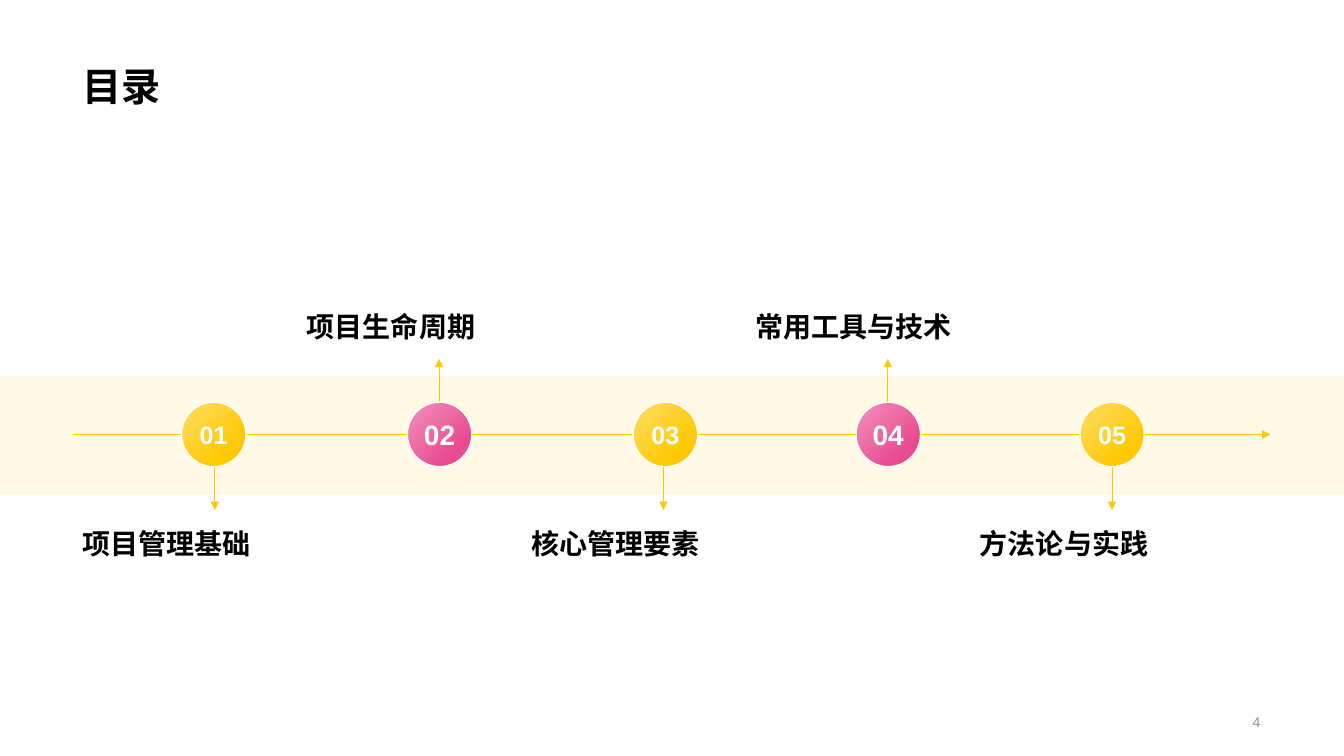
from lxml import etree
from pptx import Presentation
from pptx.dml.color import RGBColor
from pptx.enum import shapes, text
from pptx.oxml import ns
from pptx.util import Inches, Pt

COLORS = {
    "band": "FFC803",
    "yellow": ("FFDE68", "FFC803"),
    "pink": ("F194BC", "E84C8F"),
    "white": "FFFFFF",
    "black": "000000",
    "gray": "8C8C8C",
}
LATIN, CHINESE = "Arial", "Noto Sans CJK SC"

# Chapter title and left edge of its circle
CHAPTERS = [
    ("项目管理基础", 1.8),
    ("项目生命周期", 4.04),
    ("核心管理要素", 6.28),
    ("常用工具与技术", 8.49),
    ("方法论与实践", 10.71),
]
LABEL_LEFT, LABEL_STEP = 0.72, 2.225
CIRCLE_TOP, CIRCLE_SIZE = 3.99, 0.64


def write(shape, content, size, color, font=LATIN, bold=True,
          align=text.PP_ALIGN.LEFT, anchor=text.MSO_ANCHOR.MIDDLE, wrap=True):
    frame = shape.text_frame
    frame.word_wrap = wrap
    frame.vertical_anchor = anchor
    paragraph = frame.paragraphs[0]
    paragraph.text = content
    paragraph.alignment = align
    paragraph.font.name = font
    paragraph.font.size = Pt(size)
    paragraph.font.bold = bold
    paragraph.font.color.rgb = RGBColor.from_string(COLORS[color])
    # East Asian typeface
    properties = paragraph._p.pPr.find(ns.qn("a:defRPr"))
    latin = properties.find(ns.qn("a:latin"))
    latin.addnext(etree.Element(ns.qn("a:ea"), typeface=font))


def add_text(slide, box, *args, **options):
    textbox = slide.shapes.add_textbox(*map(Inches, box))
    write(textbox, *args, **options)


def add_band(slide, box):
    band = slide.shapes.add_shape(shapes.MSO_SHAPE.RECTANGLE, *map(Inches, box))
    band.shadow.inherit = False
    band.line.fill.background()
    band.fill.solid()
    band.fill.fore_color.rgb = RGBColor.from_string(COLORS["band"])
    # 10% opacity
    color = band.fill._xPr.find(".//" + ns.qn("a:srgbClr"))
    etree.SubElement(color, ns.qn("a:alpha"), val="10000")


def add_arrow(slide, *ends):
    arrow = slide.shapes.add_connector(
        shapes.MSO_CONNECTOR.STRAIGHT, *map(Inches, ends))
    arrow.line.color.rgb = RGBColor.from_string(COLORS["band"])
    arrow.line.width = Pt(0.5)
    etree.SubElement(arrow.line._ln, ns.qn("a:tailEnd"), type="triangle")
    etree.SubElement(arrow._element.spPr, ns.qn("a:effectLst"))


def add_circle(slide, left, number, gradient, size):
    circle = slide.shapes.add_shape(
        shapes.MSO_SHAPE.OVAL,
        *map(Inches, (left, CIRCLE_TOP, CIRCLE_SIZE, CIRCLE_SIZE)))
    circle.shadow.inherit = False
    circle.line.color.rgb = RGBColor.from_string(COLORS["white"])
    circle.line.width = Pt(1)
    circle.fill.gradient()
    circle.fill.gradient_angle = 315
    stops = zip(circle.fill.gradient_stops, COLORS[gradient], (0, 0.75))
    for stop, color, position in stops:
        stop.color.rgb = RGBColor.from_string(color)
        stop.position = position
    write(circle, f"{number:02d}", size, "white",
          align=text.PP_ALIGN.CENTER, wrap=False)


def add_chapter(slide, index, title, circle_left):
    # Every second chapter is pink with its title above the band
    if index % 2:
        gradient, size = "pink", 20
        label_top, anchor = 2.67, text.MSO_ANCHOR.BOTTOM
        arrow_start, arrow_end = CIRCLE_TOP, 3.56
    else:
        gradient, size = "yellow", 18
        label_top, anchor = 5.17, text.MSO_ANCHOR.TOP
        arrow_start, arrow_end = CIRCLE_TOP + CIRCLE_SIZE, 5.06
    label_left = LABEL_LEFT + index * LABEL_STEP
    arrow_x = label_left + 1.41
    add_circle(slide, circle_left, index + 1, gradient, size)
    add_text(slide, (label_left, label_top, 2.81, 0.78), title, 20, "black",
             font=CHINESE, anchor=anchor)
    add_arrow(slide, arrow_x, arrow_start, arrow_x, arrow_end)


def main():
    presentation = Presentation()
    presentation.slide_width = Inches(13.33)
    presentation.slide_height = Inches(7.5)
    slide = presentation.slides.add_slide(presentation.slide_layouts[6])

    # Page number
    add_text(slide, (8.6, 7.01, 4, 0.3), "4", 10, "gray", bold=False,
             align=text.PP_ALIGN.RIGHT)

    # Timeline of chapters
    add_band(slide, (0, 3.73, 13.33, 1.18))
    add_arrow(slide, 0.72, 4.31, 12.6, 4.31)
    for index, (title, circle_left) in enumerate(CHAPTERS):
        add_chapter(slide, index, title, circle_left)

    # Slide title
    add_text(slide, (0.72, 0.15, 11.88, 0.98), "目录", 28, "black",
             font=CHINESE, anchor=text.MSO_ANCHOR.BOTTOM)

    presentation.save("out.pptx")


if __name__ == "__main__":
    main()
